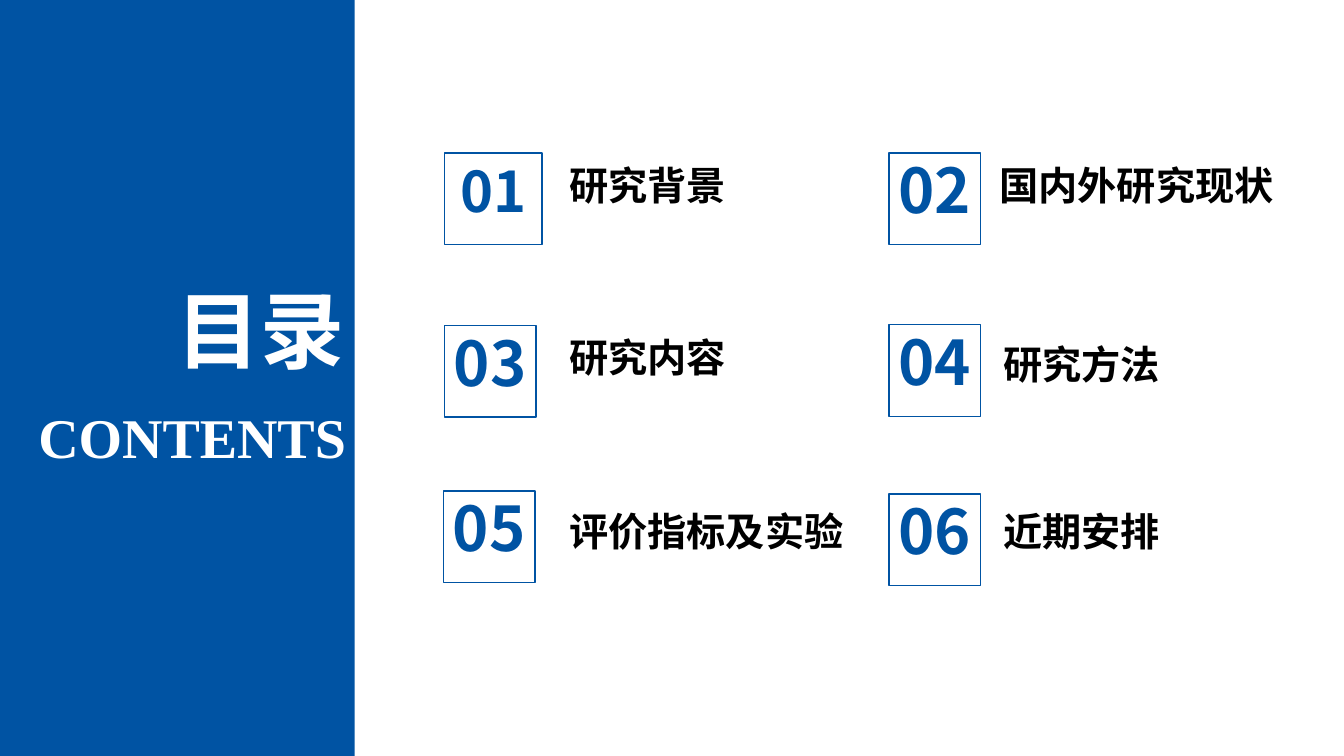
import pptx
import pptx.dml.color
import pptx.enum.shapes
import pptx.enum.text
import pptx.oxml.ns
import pptx.util
from dataclasses import dataclass
from lxml import etree
from pptx.util import Cm

HEADING = "目录"
SUBHEADING = "CONTENTS"

# number, label, number size, frame (left, top, width), label box (left, top, width, height)
ENTRIES = [
    ("01", "研究背景", 40, (11.2, 3.86, 2.46), (14.1, 4.09, 7.09, 1.45)),
    ("03", "研究内容", 44, (11.2, 8.2, 2.31), (14.1, 8.43, 6.65, 1.45)),
    ("05", "评价指标及实验", 44, (11.17, 12.37, 2.31), (14.1, 12.8, 7.75, 1.45)),
    ("04", "研究方法", 44, (22.4, 8.18, 2.31), (25.04, 8.61, 6.65, 2.64)),
    ("02", "国内外研究现状", 44, (22.4, 3.86, 2.31), (24.94, 4.09, 7.75, 1.45)),
    ("06", "近期安排", 44, (22.4, 12.45, 2.31), (25.04, 12.8, 7.75, 1.45)),
]
FRAME_HEIGHT = 2.31
NUMBER_WIDTH = 2.48
NUMBER_HEIGHTS = {40: 1.96, 44: 2.13}


@dataclass(frozen=True)
class Theme:
    blue: str = "0053A3"
    white: str = "FFFFFF"
    black: str = "000000"
    chinese_font: str = "Noto Sans CJK SC"
    latin_font: str = "Times New Roman"
    chinese_spacing: float = 0.88
    heading_size: int = 60
    subheading_size: int = 40
    label_size: int = 28
    frame_line: float = 1


THEME = Theme()
ALIGN = pptx.enum.text.PP_ALIGN


def rgb(value):
    return pptx.dml.color.RGBColor.from_string(value)


def add_rectangle(shapes, left, top, width, height, fill=None):
    shape = shapes.add_shape(
        pptx.enum.shapes.MSO_SHAPE.RECTANGLE, Cm(left), Cm(top), Cm(width), Cm(height)
    )
    shape.shadow.inherit = False
    if fill:
        shape.fill.solid()
        shape.fill.fore_color.rgb = rgb(fill)
        shape.line.fill.background()
    else:
        shape.fill.background()
        shape.line.color.rgb = rgb(THEME.blue)
        shape.line.width = pptx.util.Pt(THEME.frame_line)


def add_text(shapes, box, text, size, color, align=ALIGN.LEFT,
             font_name=THEME.chinese_font, spacing=THEME.chinese_spacing, top_inset=0.13):
    text_frame = shapes.add_textbox(*map(Cm, box)).text_frame
    text_frame.word_wrap = True
    text_frame.margin_top = Cm(top_inset)
    paragraph = text_frame.paragraphs[0]
    paragraph.text = text
    paragraph.alignment = align
    paragraph.line_spacing = spacing
    font = paragraph.font
    font.name = font_name
    font.size = pptx.util.Pt(size)
    font.bold = True
    font.color.rgb = rgb(color)
    properties = paragraph.runs[0].font
    properties.name = font_name
    run_properties = paragraph.runs[0].font._element
    east_asian = etree.SubElement(run_properties, pptx.oxml.ns.qn("a:ea"))
    east_asian.set("typeface", font_name)


def add_entry(slide, number, label, number_size, frame, label_box):
    shapes = slide.shapes.add_group_shape().shapes
    left, top, width = frame
    number_height = NUMBER_HEIGHTS[number_size]
    number_box = (
        left + (width - NUMBER_WIDTH) / 2,
        top + (FRAME_HEIGHT - number_height) / 2,
        NUMBER_WIDTH,
        number_height,
    )
    add_text(shapes, label_box, label, THEME.label_size, THEME.black)
    add_text(shapes, number_box, number, number_size, THEME.blue, ALIGN.CENTER)
    add_rectangle(shapes, left, top, width, FRAME_HEIGHT)


def main():
    presentation = pptx.Presentation()
    presentation.slide_width = Cm(33.87)
    presentation.slide_height = Cm(19.05)
    slide = presentation.slides.add_slide(presentation.slide_layouts[6])
    add_rectangle(slide.shapes, 0, 0, 8.94, 19.05, THEME.blue)
    add_text(slide.shapes, (2.49, 7.21, 6.45, 2.82), HEADING,
             THEME.heading_size, THEME.white, ALIGN.RIGHT)
    add_text(slide.shapes, (0, 9.88, 8.97, 1.96), SUBHEADING,
             THEME.subheading_size, THEME.white, ALIGN.RIGHT,
             THEME.latin_font, 1.0, 0.27)
    for entry in ENTRIES:
        add_entry(slide, *entry)
    presentation.save("out.pptx")


if __name__ == "__main__":
    main()
